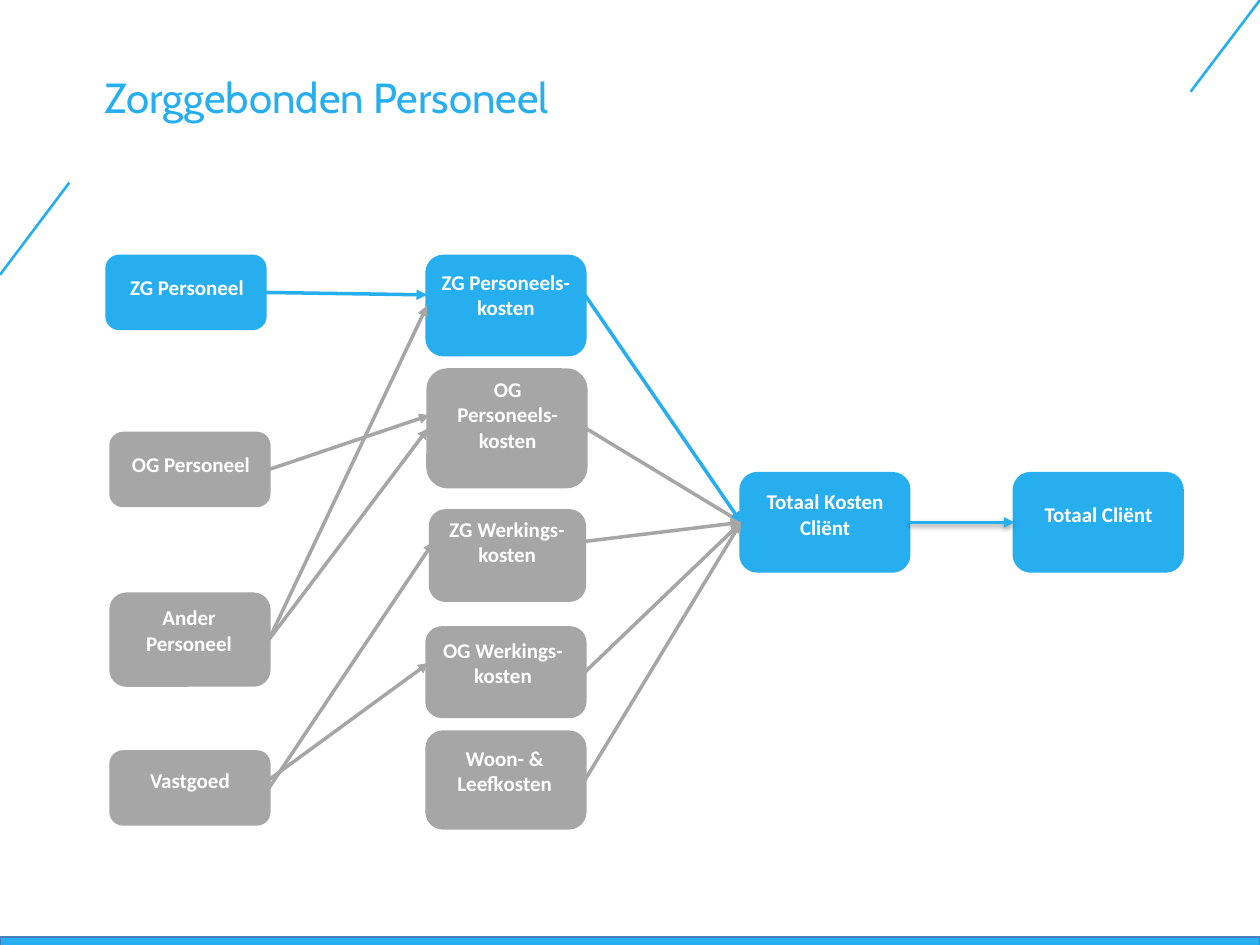
"""Build the cost flow slide 'Zorggebonden Personeel'."""
import pptx
import pptx.dml.color
import pptx.enum.shapes
import pptx.enum.text
import pptx.oxml
import pptx.oxml.ns
import pptx.util

Cm, Pt = pptx.util.Cm, pptx.util.Pt
SHAPE = pptx.enum.shapes.MSO_SHAPE
COLORS = {"blue": "27AEEF", "grey": "A6A6A6", "edge": "4B7EBC", "white": "FFFFFF"}
RGB = {name: pptx.dml.color.RGBColor.from_string(value) for name, value in COLORS.items()}
NS = pptx.oxml.ns.nsdecls("a")
SHADOW = (
    '<a:outerShdw blurRad="40000" dist="20000" dir="5400000" rotWithShape="0">'
    '<a:srgbClr val="000000"><a:alpha val="38000"/></a:srgbClr></a:outerShdw>'
)
LEFT_SIDE, RIGHT_SIDE = 1, 3


def add_block(kind, box, fill, edge, width):
    block = slide.shapes.add_shape(kind, *map(Cm, box))
    block.shadow.inherit = False
    block.fill.solid()
    block.fill.fore_color.rgb = RGB[fill]
    block.line.color.rgb = RGB[edge]
    block.line.width = Pt(width)
    return block


def add_line(ends, color, width, effect=""):
    line = slide.shapes.add_connector(
        pptx.enum.shapes.MSO_CONNECTOR.STRAIGHT, *map(Cm, ends))
    line.line.color.rgb = RGB[color]
    line.line.width = Pt(width)
    line._element.spPr.append(
        pptx.oxml.parse_xml(f"<a:effectLst {NS}>{effect}</a:effectLst>"))
    return line


deck = pptx.Presentation()
deck.slide_width, deck.slide_height = Cm(25.4), Cm(19.05)
slide = deck.slides.add_slide(deck.slide_layouts[5])

title = slide.shapes.title
title.left, title.top, title.width, title.height = map(Cm, (1.85, 1.32, 21.03, 1.6))
title.text_frame.text = "Zorggebonden Personeel"
title.text_frame.vertical_anchor = pptx.enum.text.MSO_ANCHOR.TOP
heading = title.text_frame.paragraphs[0]
heading.alignment = pptx.enum.text.PP_ALIGN.LEFT
heading.runs[0].font.name = "Cabin"
heading.runs[0].font.size = Pt(24)
heading.runs[0].font.color.rgb = RGB["blue"]

add_block(SHAPE.RECTANGLE, (0, 18.89, 25.4, 0.18), "blue", "edge", 0.75)
for corner in [(1.4, 3.68, 0, 5.54), (25.4, 0, 24, 1.85)]:
    add_line(corner, "blue", 1.5)

COSTS = [
    ("ZG Personeel", "blue", (2.16, 5.17, 3.18, 1.45), (2.18, 5.41, 3.18, 0.76)),
    ("OG Personeel", "grey", (2.24, 8.74, 3.18, 1.45), (2.29, 8.97, 3.12, 0.76)),
    ("Ander Personeel", "grey", (2.24, 11.98, 3.18, 1.83), (2.26, 12.07, 3.1, 1.27)),
    ("Vastgoed", "grey", (2.24, 15.16, 3.18, 1.45), (2.24, 15.34, 3.18, 0.76)),
    ("ZG Personeels-kosten", "blue", (8.61, 5.17, 3.18, 1.98), (8.61, 5.31, 3.18, 1.27)),
    ("OG Personeels-kosten", "grey", (8.63, 7.46, 3.18, 2.35), (8.66, 7.47, 3.15, 1.8)),
    ("ZG Werkings-kosten", "grey", (8.68, 10.3, 3.1, 1.8), (8.74, 10.29, 2.97, 1.27)),
    ("OG Werkings-kosten", "grey", (8.61, 12.66, 3.18, 1.78), (8.64, 12.73, 3, 1.27)),
    ("Woon- & Leefkosten", "grey", (8.61, 14.76, 3.18, 1.93), (8.69, 14.91, 2.97, 1.27)),
    ("Totaal Kosten Cliënt", "blue", (14.94, 9.55, 3.38, 1.96), (14.96, 9.73, 3.35, 1.27)),
    ("Totaal Cliënt", "blue", (20.45, 9.55, 3.38, 1.96), (20.47, 9.98, 3.35, 0.76)),
]
nodes, labels = {}, {}
for name, color, node_box, label_box in COSTS:
    nodes[name] = add_block(SHAPE.ROUNDED_RECTANGLE, node_box, color, color, 2)
    label = labels[name] = slide.shapes.add_textbox(*map(Cm, label_box))
    label.text_frame.word_wrap = True
    label.text_frame.auto_size = pptx.enum.text.MSO_AUTO_SIZE.SHAPE_TO_FIT_TEXT
    label.text_frame.text = name
    caption = label.text_frame.paragraphs[0]
    caption.alignment = pptx.enum.text.PP_ALIGN.CENTER
    caption.runs[0].font.name = "Calibri"
    caption.runs[0].font.size = Pt(12)
    caption.runs[0].font.bold = True
    caption.runs[0].font.color.rgb = RGB["white"]

total = nodes["Totaal Kosten Cliënt"]
FLOWS = [
    (nodes["ZG Personeel"], labels["ZG Personeels-kosten"], "blue", ""),
    (nodes["OG Personeel"], labels["OG Personeels-kosten"], "grey", ""),
    (nodes["Ander Personeel"], nodes["OG Personeels-kosten"], "grey", ""),
    (nodes["Ander Personeel"], nodes["ZG Personeels-kosten"], "grey", ""),
    (labels["Vastgoed"], labels["OG Werkings-kosten"], "grey", ""),
    (nodes["Vastgoed"], labels["ZG Werkings-kosten"], "grey", ""),
    (nodes["OG Personeels-kosten"], total, "grey", ""),
    (labels["ZG Werkings-kosten"], total, "grey", ""),
    (nodes["OG Werkings-kosten"], total, "grey", ""),
    (nodes["Woon- & Leefkosten"], total, "grey", ""),
    (labels["ZG Personeels-kosten"], total, "blue", ""),
    (total, nodes["Totaal Cliënt"], "blue", SHADOW),
]
for source, target, color, effect in FLOWS:
    flow = add_line((0, 0, 0, 0), color, 2, effect)
    flow.begin_connect(source, RIGHT_SIDE)
    flow.end_connect(target, LEFT_SIDE)
    flow.line._get_or_add_ln().append(
        pptx.oxml.parse_xml(f'<a:tailEnd {NS} type="triangle"/>'))

deck.save("out.pptx")
